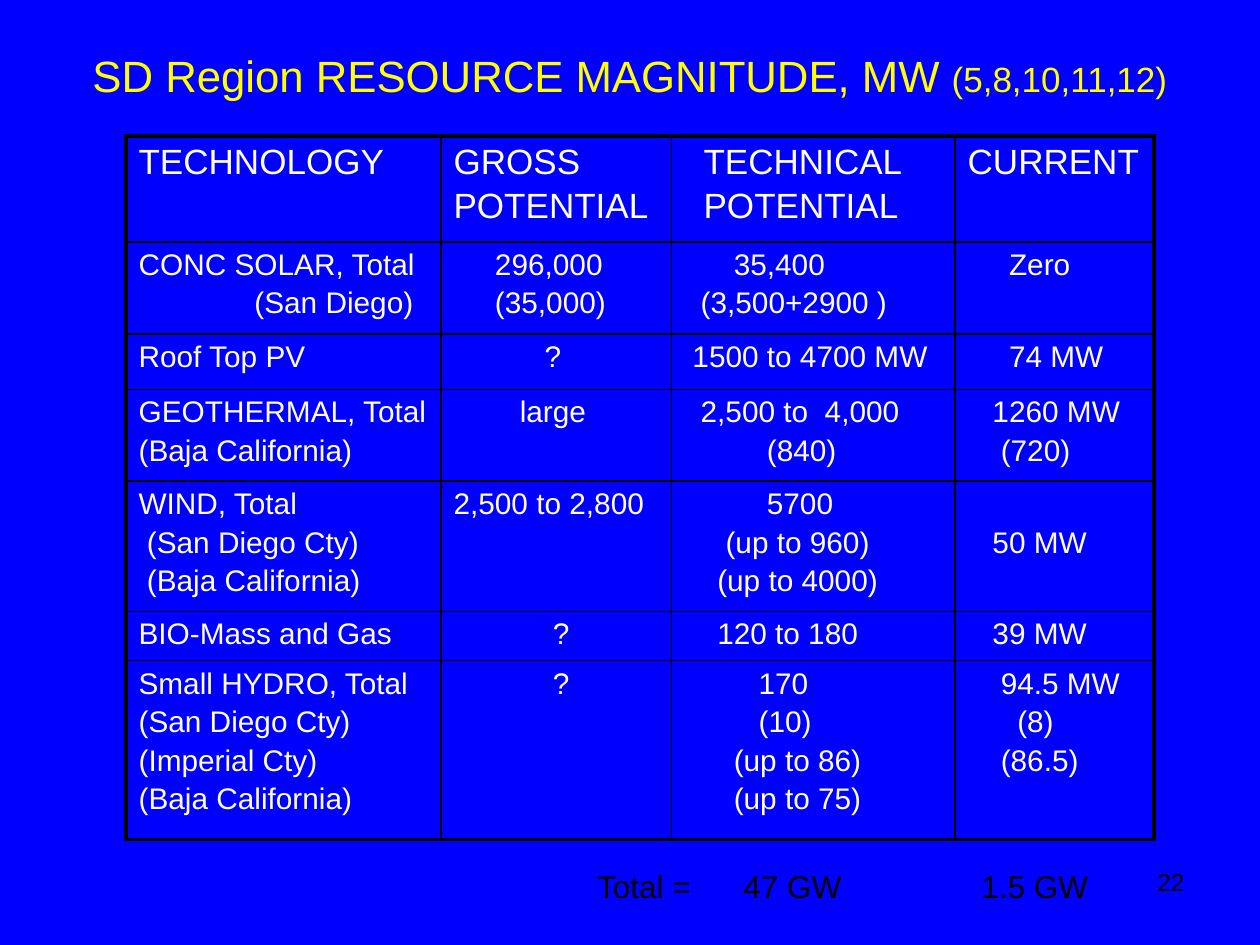
from pptx import Presentation
from pptx.dml.color import RGBColor as RGB
from pptx.enum.text import MSO_ANCHOR as ANCHOR, PP_ALIGN as ALIGN
from pptx.oxml.ns import qn
from pptx.util import Inches, Pt
from lxml.etree import SubElement as Sub

COLS = {"back": "0000FF", "title": "FFFF00", "body": "FFFFFF", "line": "000000"}


def add_run(para, text, size, col):
    run = para.add_run()
    run.text = text
    run.font.name = "Arial"
    run.font.size = Pt(size)
    run.font.color.rgb = RGB.from_string(COLS[col])


def add_box(left, top, width, height, align):
    frame = slide.shapes.add_textbox(
        Inches(left), Inches(top), Inches(width), Inches(height)).text_frame
    frame.word_wrap = True
    frame.paragraphs[0].alignment = align
    return frame


deck = Presentation()
deck.slide_width, deck.slide_height = Inches(10), Inches(7.5)
slide = deck.slides.add_slide(deck.slide_layouts[6])
slide.background.fill.solid()
slide.background.fill.fore_color.rgb = RGB.from_string(COLS["back"])

# Page number
page = add_box(7.17, 6.83, 2.33, 0.52, ALIGN.RIGHT)
add_run(page.paragraphs[0], "22", 14, "line")

# Title
title = add_box(0.5, 0.33, 9, 0.53, ALIGN.CENTER)
title.vertical_anchor = ANCHOR.MIDDLE
add_run(title.paragraphs[0], "SD Region RESOURCE MAGNITUDE, MW ", 25, "title")
add_run(title.paragraphs[0], "(5,8,10,11,12)", 20, "title")

# Table data: each cell is a list of lines, each line is (indent steps, text)
WIDTHS = [2.5, 1.83, 2.25, 1.58]
HEIGHTS = [0.84, 0.73, 0.44, 0.73, 1.03, 0.39, 1.42]
ROWS = [
    [[(0, "TECHNOLOGY")], [(0, "GROSS"), (0, "POTENTIAL")],
     [(2, "TECHNICAL"), (2, "POTENTIAL")], [(0, "CURRENT")]],
    [[(0, "CONC SOLAR, Total"), (14, "(San Diego)")],
     [(5, "296,000"), (5, "(35,000)")],
     [(6, "35,400"), (2, "(3,500+2900 )")], [(5, "Zero")]],
    [[(0, "Roof Top PV")], [(11, "?")], [(1, "1500 to 4700 MW")], [(5, "74 MW")]],
    [[(0, "GEOTHERMAL, Total"), (0, "(Baja California)")], [(8, "large")],
     [(2, "2,500 to  4,000"), (10, "(840)")], [(3, "1260 MW"), (4, "(720)")]],
    [[(0, "WIND, Total"), (1, "(San Diego Cty)"), (1, "(Baja California)")],
     [(0, "2,500 to 2,800")],
     [(10, "5700"), (5, "(up to 960)"), (4, "(up to 4000)")], [(3, "50 MW")]],
    [[(0, "BIO-Mass and Gas")], [(12, "?")], [(4, "120 to 180")], [(3, "39 MW")]],
    [[(0, "Small HYDRO, Total"), (0, "(San Diego Cty)"), (0, "(Imperial Cty)"),
      (0, "(Baja California)")], [(12, "?")],
     [(9, "170"), (9, "(10)"), (6, "(up to 86)"), (6, "(up to 75)")],
     [(4, "94.5 MW"), (6, "(8)"), (4, "(86.5)")]],
]

# Table grid
table = slide.shapes.add_table(
    len(ROWS), len(WIDTHS), Inches(1), Inches(1.08),
    Inches(sum(WIDTHS)), Inches(sum(HEIGHTS))).table
table.first_row = table.horz_banding = False
for col, width in zip(table.columns, WIDTHS):
    col.width = Inches(width)
for row, height in zip(table.rows, HEIGHTS):
    row.height = Inches(height)

# Cell text and borders, heavier round the outside
for r, row in enumerate(ROWS):
    size = 20 if r == 0 else 17
    step = Pt(size) * 0.278
    for c, lines in enumerate(row):
        cell = table.cell(r, c)
        frame = cell.text_frame
        for i, (steps, text) in enumerate(lines):
            para = frame.paragraphs[0] if i == 0 else frame.add_paragraph()
            para.space_before = Pt(3 if i else 0)
            props = para._p.get_or_add_pPr()
            props.set("marL", str(round(steps * step)))
            props.set("indent", "0")
            add_run(para, text, size, "body")
        edges = {"lnL": c == 0, "lnR": c == len(WIDTHS) - 1,
                 "lnT": r == 0, "lnB": r == len(ROWS) - 1}
        props = cell._tc.get_or_add_tcPr()
        for tag, outer in edges.items():
            line = Sub(props, qn("a:" + tag), w=str(Pt(2.25 if outer else 1)))
            Sub(Sub(line, qn("a:solidFill")), qn("a:srgbClr"), val=COLS["line"])
        cell.fill.background()

# The wind figure sits on the second line of its cell
table.cell(4, 3).margin_top = Inches(0.36)

# Totals, set out with tab stops
total = add_box(4.33, 6.83, 4.83, 0.52, ALIGN.LEFT)
total.margin_left = Inches(0.41)
para = total.paragraphs[0]
tabs = Sub(para._p.get_or_add_pPr(), qn("a:tabLst"))
for stop in (1.16, 3.05):
    Sub(tabs, qn("a:tab"), pos=str(Inches(stop)), algn="l")
add_run(para, "Total =\t47 GW\t1.5 GW", 18, "line")

deck.save("out.pptx")
